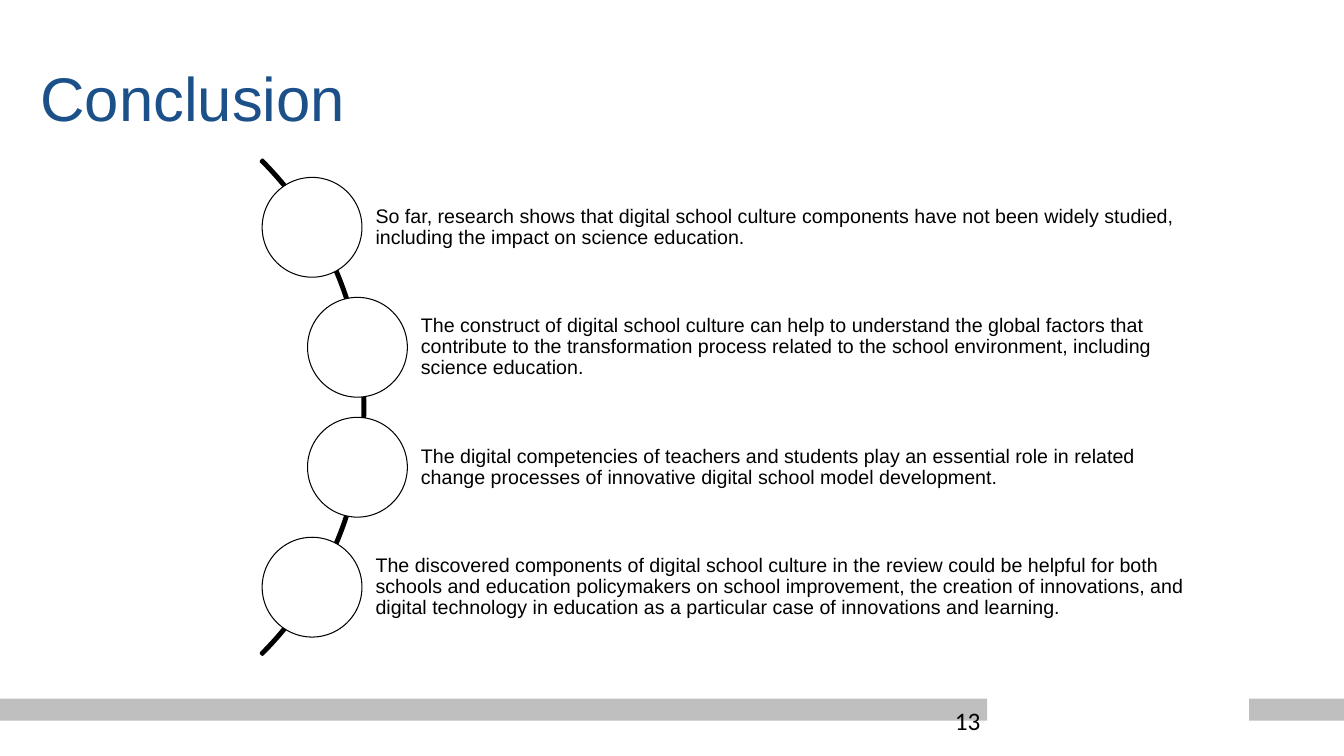
from dataclasses import dataclass

from pptx import Presentation
from pptx.dml.color import RGBColor
from pptx.enum.shapes import MSO_SHAPE as Preset
from pptx.enum.text import MSO_ANCHOR as Anchor, PP_ALIGN as Align
from pptx.shapes.autoshape import Shape
from pptx.slide import Slide
from pptx.util import Inches, Pt


@dataclass(frozen=True)
class Theme:
    blue: str = "1B5089"
    black: str = "000000"
    white: str = "FFFFFF"
    grey: str = "BFBFBF"
    title_size: float = 44
    body_size: float = 14
    number_size: float = 18
    heading_font: str = "Arial"
    number_font: str = "Calibri"


THEME = Theme()


@dataclass(frozen=True)
class Box:
    left: float
    top: float
    width: float
    height: float

    def lengths(self) -> list[int]:
        return [Inches(value) for value in (self.left, self.top, self.width, self.height)]


@dataclass(frozen=True)
class TextStyle:
    size: float
    color: str
    font: str = THEME.heading_font
    anchor: Anchor = Anchor.MIDDLE
    line_spacing: float = 0.9
    inset: float = 0.05
    left_inset: float = 0.05


@dataclass(frozen=True)
class Finding:
    circle_left: float
    text: str


TITLE_STYLE = TextStyle(THEME.title_size, THEME.blue)
FINDING_STYLE = TextStyle(THEME.body_size, THEME.black, inset=0.04, left_inset=0.63)
NUMBER_STYLE = TextStyle(THEME.number_size, THEME.black, THEME.number_font, Anchor.TOP, 1.0)

FOOTER_BARS = [Box(0, 6.93, 9.79, 0.22), Box(12.39, 6.93, 0.94, 0.22)]
ARC = Box(-3.32, 0.57, 6.94, 6.94)
ARC_ADJUSTMENTS = (189, 27, 0.003)  # start angle, end angle, thickness

OUTER_LEFT, INNER_LEFT = 2.6, 3.05
FIRST_CENTER, STEP = 2.255, 1.19
DIAMETER, PANEL_HEIGHT, PANEL_RIGHT = 0.99, 0.79, 11.8

FINDINGS = [
    Finding(OUTER_LEFT, "So far, research shows that digital school culture components have not "
            "been widely studied, including the impact on science education."),
    Finding(INNER_LEFT, "The construct of digital school culture can help to understand the global "
            "factors that contribute to the transformation process related to the school "
            "environment, including science education."),
    Finding(INNER_LEFT, "The digital competencies of teachers and students play an essential role "
            "in related change processes of innovative digital school model development."),
    Finding(OUTER_LEFT, "The discovered components of digital school culture in the review could be "
            "helpful for both schools and education policymakers on school improvement, the "
            "creation of innovations, and digital technology in education as a particular case "
            "of innovations and learning."),
]


def set_attributes(target: object, values: dict[str, object]) -> None:
    for name, value in values.items():
        setattr(target, name, value)


def add_preset(slide: Slide, preset: Preset, box: Box, fill: str | None = None,
               line_width: float | None = None) -> Shape:
    """Add a shape without shadow; leave out its fill or outline when None."""
    shape = slide.shapes.add_shape(preset, *box.lengths())
    shape.shadow.inherit = False
    if fill is None:
        shape.fill.background()
    else:
        shape.fill.solid()
        shape.fill.fore_color.rgb = RGBColor.from_string(fill)
    if line_width is None:
        shape.line.fill.background()
    else:
        shape.line.color.rgb = RGBColor.from_string(THEME.black)
        shape.line.width = Pt(line_width)
    return shape


def write_text(shape: Shape, text: str, style: TextStyle) -> None:
    frame = shape.text_frame
    inset = Inches(style.inset)
    set_attributes(frame, {
        "word_wrap": True, "vertical_anchor": style.anchor,
        "margin_left": Inches(style.left_inset), "margin_right": inset,
        "margin_top": inset, "margin_bottom": inset,
    })
    paragraph = frame.paragraphs[0]
    set_attributes(paragraph, {
        "text": text, "alignment": Align.LEFT, "line_spacing": style.line_spacing,
    })
    set_attributes(paragraph.font, {"name": style.font, "size": Pt(style.size)})
    paragraph.font.color.rgb = RGBColor.from_string(style.color)


def add_text(slide: Slide, box: Box, text: str, style: TextStyle) -> None:
    write_text(slide.shapes.add_textbox(*box.lengths()), text, style)


def add_finding(slide: Slide, finding: Finding, center: float) -> None:
    """Add the text panel from the circle's middle to the right, then the circle."""
    panel_left = finding.circle_left + DIAMETER / 2
    panel_box = Box(panel_left, center - PANEL_HEIGHT / 2,
                    PANEL_RIGHT - panel_left, PANEL_HEIGHT)
    panel = add_preset(slide, Preset.RECTANGLE, panel_box, THEME.white)
    write_text(panel, finding.text, FINDING_STYLE)
    circle_box = Box(finding.circle_left, center - DIAMETER / 2, DIAMETER, DIAMETER)
    add_preset(slide, Preset.OVAL, circle_box, THEME.white, 0.75)


def main() -> None:
    presentation = Presentation()
    set_attributes(presentation, {"slide_width": Inches(13.33), "slide_height": Inches(7.5)})
    slide = presentation.slides.add_slide(presentation.slide_layouts[6])

    for bar in FOOTER_BARS:
        add_preset(slide, Preset.RECTANGLE, bar, THEME.grey)
    add_text(slide, Box(0.35, 0.57, 12.81, 0.87), "Conclusion", TITLE_STYLE)
    add_text(slide, Box(9.42, 6.95, 0.37, 0.36), "13", NUMBER_STYLE)

    arc = add_preset(slide, Preset.BLOCK_ARC, ARC, line_width=2)
    for index, value in enumerate(ARC_ADJUSTMENTS):
        arc.adjustments[index] = value
    for index, finding in enumerate(FINDINGS):
        add_finding(slide, finding, FIRST_CENTER + index * STEP)

    presentation.save("out.pptx")


if __name__ == "__main__":
    main()
